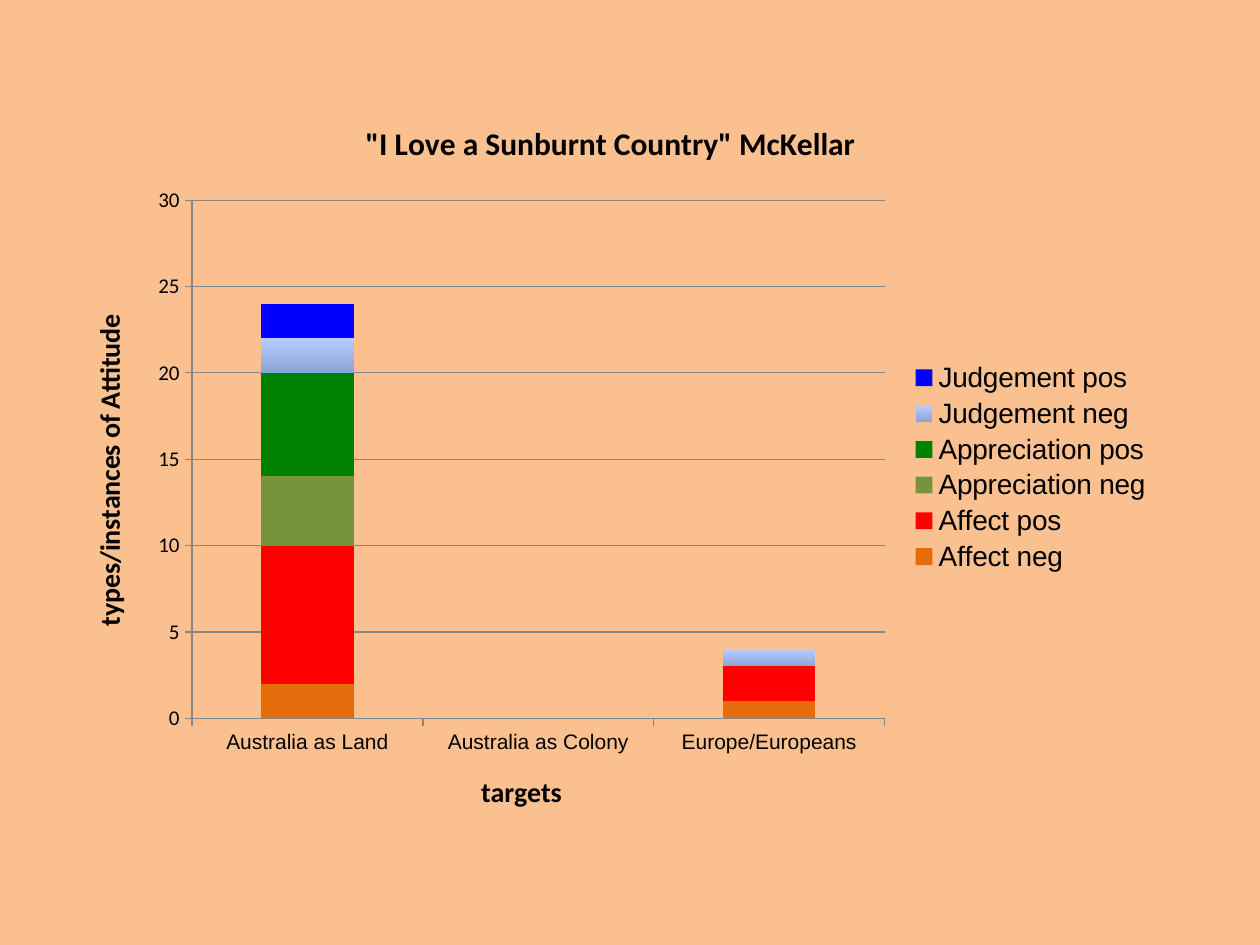
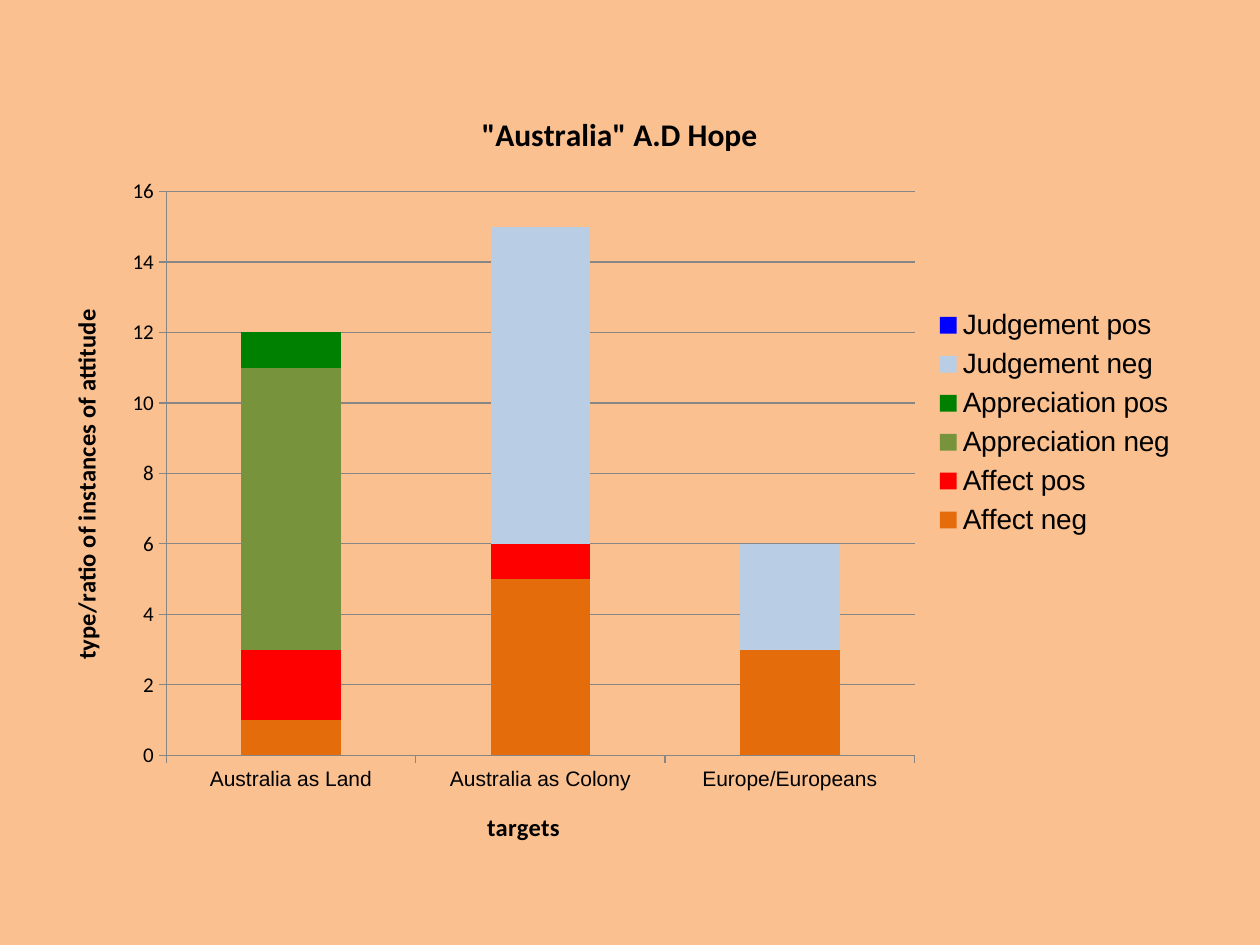
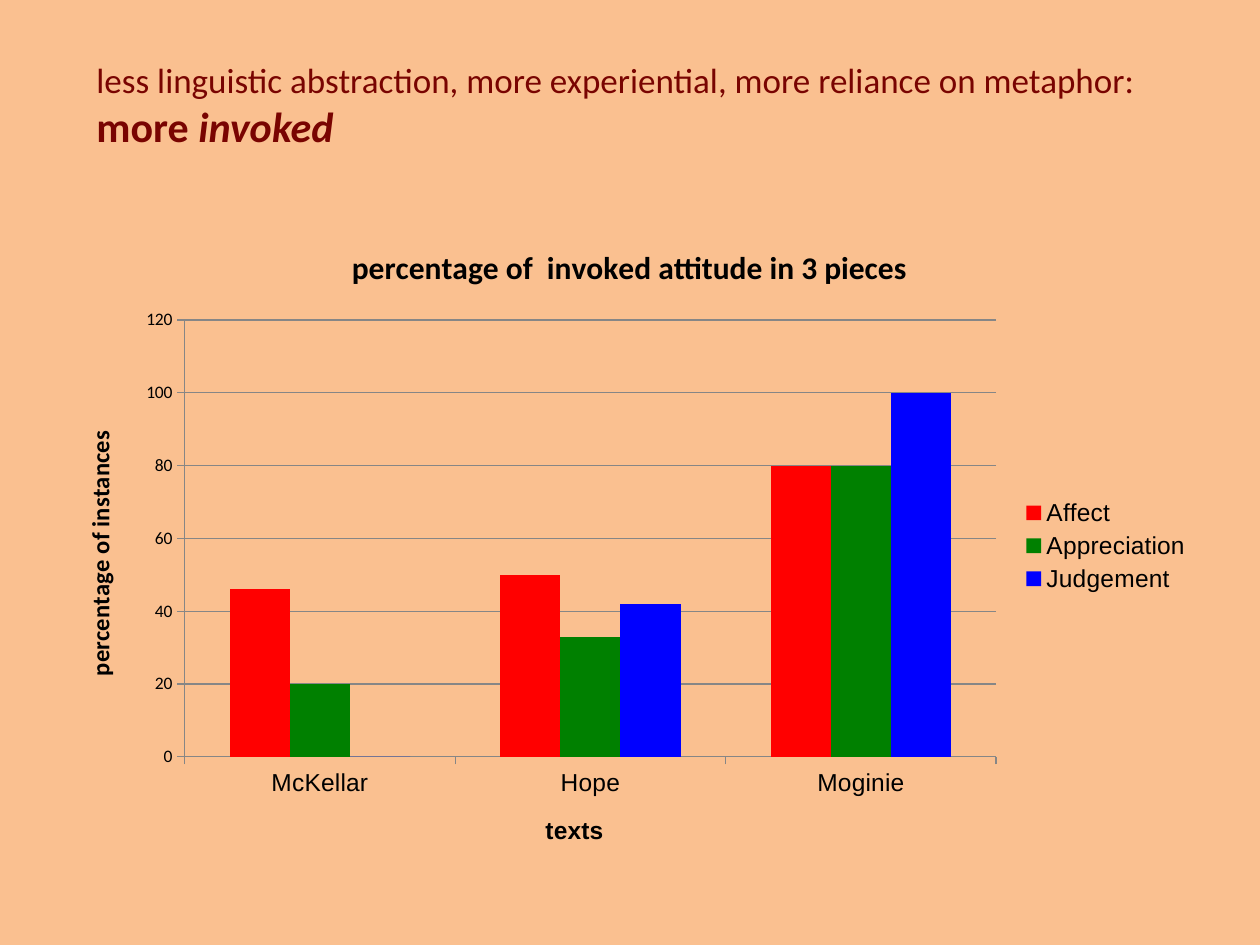
from lxml.etree import SubElement
from pptx import Presentation
from pptx.chart.data import CategoryChartData
from pptx.dml.color import RGBColor
from pptx.enum.chart import XL_CHART_TYPE, XL_LEGEND_POSITION, XL_TICK_MARK
from pptx.enum.text import MSO_ANCHOR, PP_ALIGN
from pptx.oxml.ns import qn
from pptx.util import Cm, Pt


def style_font(font, size, name="Calibri", color="000000", bold=False):
    font.size = Pt(size)
    font.name = name
    font.bold = bold
    font.color.rgb = RGBColor.from_string(color)


def place(part, index, percentages, inner=False):
    for old in part.findall(qn("c:layout")):
        part.remove(old)
    layout = part.makeelement(qn("c:layout"))
    part.insert(index, layout)
    manual = SubElement(layout, qn("c:manualLayout"))
    if inner:
        SubElement(manual, qn("c:layoutTarget")).set("val", "inner")
    for tag in ("xMode", "yMode"):
        SubElement(manual, qn("c:" + tag)).set("val", "edge")
    for tag, percentage in zip("xywh", percentages):
        SubElement(manual, qn("c:" + tag)).set("val", str(round(percentage / 100, 4)))


BACKGROUND = "FAC090"
HEADING = "790401"
GRID = "868686"
GRADIENT = ("8AA6D6", "B9CDFF")
COLORS = {
    "Affect neg": "E46C0A",
    "Series 2": "C0504D",
    "Affect pos": "FF0000",
    "Appreciation neg": "77933C",
    "Series 5": "4BACC6",
    "Appreciation pos": "008000",
    "Judgement neg": "B9CDE5",
    "Series 8": "C0504D",
    "Judgement pos": "0000FF",
    "Affect": "FF0000",
    "Appreciation": "008000",
    "Judgement": "0000FF",
}
SPACERS = ("Series 2", "Series 5", "Series 8")
TARGETS = ["Australia as Land", "Australia as Colony", "Europe/Europeans"]

studies = [
    {
        "title": '"I Love a Sunburnt Country" McKellar ',
        "box": (1.27, 1.9, 22.22, 15.04),
        "kind": XL_CHART_TYPE.COLUMN_STACKED,
        "categories": TARGETS,
        "values": {
            "Affect neg": (2, None, 1),
            "Series 2": (0, None, None),
            "Affect pos": (8, None, 2),
            "Appreciation neg": (4, None, None),
            "Series 5": (0, None, None),
            "Appreciation pos": (6, None, None),
            "Judgement neg": (2, None, 1),
            "Series 8": (None, None, None),
            "Judgement pos": (2, None, None),
        },
        "gradient": "Judgement neg",
        "axis_titles": ("targets", "types/instances of Attitude"),
        "axis_title_size": 16,
        "axis_title_font": "Calibri",
        "label_sizes": (12, 12),
        "scale": (30, 5),
        "legend_size": 16,
        "plot": (11.7, 14.2, 62.85, 69.45),
        "legend": (76.8, 35.25, 22, 29.5),
    },
    {
        "title": '"Australia" A.D Hope',
        "box": (0.85, 1.7, 23.28, 15.88),
        "kind": XL_CHART_TYPE.COLUMN_STACKED,
        "categories": TARGETS,
        "values": {
            "Affect neg": (1, 5, 3),
            "Series 2": (0, None, None),
            "Affect pos": (2, 1, None),
            "Appreciation neg": (8, None, None),
            "Series 5": (0, None, None),
            "Appreciation pos": (1, None, None),
            "Judgement neg": (None, 9, 3),
            "Series 8": (None, None, None),
            "Judgement pos": (None, None, None),
        },
        "gradient": None,
        "axis_titles": ("targets", "type/ratio of instances of attitude"),
        "axis_title_size": 14,
        "axis_title_font": "Calibri",
        "label_sizes": (12, 12),
        "scale": (16, 2),
        "legend_size": 16,
        "plot": (10.75, 13.6, 64.8, 71.6),
        "legend": (76.7, 27.55, 22, 30.8),
    },
    {
        "title": "percentage of  invoked attitude in 3 pieces",
        "box": (1.12, 4.44, 23.14, 13.13),
        "kind": XL_CHART_TYPE.COLUMN_CLUSTERED,
        "categories": ["McKellar", "Hope", "Moginie"],
        "values": {
            "Affect": (46, 50, 80),
            "Appreciation": (20, 33, 80),
            "Judgement": (0, 42, 100),
        },
        "gradient": None,
        "axis_titles": (" texts", "percentage of instances"),
        "axis_title_size": 14,
        "axis_title_font": "Arial",
        "label_sizes": (14, 10),
        "scale": (120, 20),
        "legend_size": 14,
        "plot": (11.25, 15.3, 70.7, 67.1),
        "legend": (84, 42, 15, 16),
        "heading": [
            (20, [("less linguistic abstraction, more experiential, more reliance on metaphor:", False)]),
            (24, [("more ", False), ("invoked", True)]),
        ],
    },
]

prs = Presentation()
prs.slide_width, prs.slide_height = Cm(25.4), Cm(19.05)
backdrop = prs.slide_master.background.fill
backdrop.solid()
backdrop.fore_color.rgb = RGBColor.from_string(BACKGROUND)

for study in studies:
    slide = prs.slides.add_slide(prs.slide_layouts[5 if "heading" in study else 6])

    figures = CategoryChartData()
    figures.categories = study["categories"]
    for attitude, counts in study["values"].items():
        figures.add_series(attitude, counts)
    box = [Cm(length) for length in study["box"]]
    chart = slide.shapes.add_chart(study["kind"], *box, figures).chart
    style_font(chart.font, 10)

    chart.has_title = True
    chart.chart_title.include_in_layout = False
    caption = chart.chart_title.text_frame
    caption.text = study["title"]
    style_font(caption.paragraphs[0].font, 18, bold=True)

    bars = chart.plots[0]
    bars.gap_width = 150
    bars.overlap = 100 if study["kind"] == XL_CHART_TYPE.COLUMN_STACKED else 0
    bars.vary_by_categories = False
    for attitude in bars.series:
        fill = attitude.format.fill
        if attitude.name == study["gradient"]:
            fill.gradient()
            fill.gradient_angle = 90
            for stop, shade in zip(fill.gradient_stops, GRADIENT):
                stop.color.rgb = RGBColor.from_string(shade)
        else:
            fill.solid()
            fill.fore_color.rgb = RGBColor.from_string(COLORS[attitude.name])

    axes = (chart.category_axis, chart.value_axis)
    label_fonts = ("Arial", "Calibri")
    title_fonts = (study["axis_title_font"], "Calibri")
    for axis, wording, title_font, label_size, label_font in zip(
        axes, study["axis_titles"], title_fonts, study["label_sizes"], label_fonts
    ):
        axis.has_title = True
        axis.axis_title.text_frame.text = wording
        axis_font = axis.axis_title.text_frame.paragraphs[0].font
        style_font(axis_font, study["axis_title_size"], title_font, bold=True)
        style_font(axis.tick_labels.font, label_size, label_font)
        axis.major_tick_mark = XL_TICK_MARK.OUTSIDE
        axis.minor_tick_mark = XL_TICK_MARK.NONE
        axis.format.line.color.rgb = RGBColor.from_string(GRID)

    chart.value_axis.minimum_scale = 0
    chart.value_axis.maximum_scale, chart.value_axis.major_unit = study["scale"]
    chart.value_axis.has_major_gridlines = True
    chart.value_axis.major_gridlines.format.line.color.rgb = RGBColor.from_string(GRID)

    chart.has_legend = True
    chart.legend.position = XL_LEGEND_POSITION.RIGHT
    chart.legend.include_in_layout = False
    style_font(chart.legend.font, study["legend_size"], "Arial")

    chart_root = chart.element
    place(chart_root.find(".//" + qn("c:plotArea")), 0, study["plot"], inner=True)
    legend = chart_root.find(".//" + qn("c:legend"))
    place(legend, 1, study["legend"])
    spacer_rows = [row for row, name in enumerate(study["values"]) if name in SPACERS]
    for position, row in enumerate(spacer_rows, 1):
        entry = legend.makeelement(qn("c:legendEntry"))
        legend.insert(position, entry)
        SubElement(entry, qn("c:idx")).set("val", str(row))
        SubElement(entry, qn("c:delete")).set("val", "1")

    if "heading" in study:
        heading = slide.shapes.title
        heading.left, heading.top = Cm(1.69), Cm(1.05)
        heading.width, heading.height = Cm(22.23), Cm(2.13)
        frame = heading.text_frame
        frame.word_wrap = True
        frame.vertical_anchor = MSO_ANCHOR.TOP
        for number, (size, pieces) in enumerate(study["heading"]):
            line = frame.add_paragraph() if number else frame.paragraphs[0]
            line.alignment = PP_ALIGN.LEFT
            style_font(line.font, size, color=HEADING, bold=number == 1)
            for words, italic in pieces:
                run = line.add_run()
                run.text = words
                if italic:
                    run.font.italic = True

prs.save("out.pptx")
